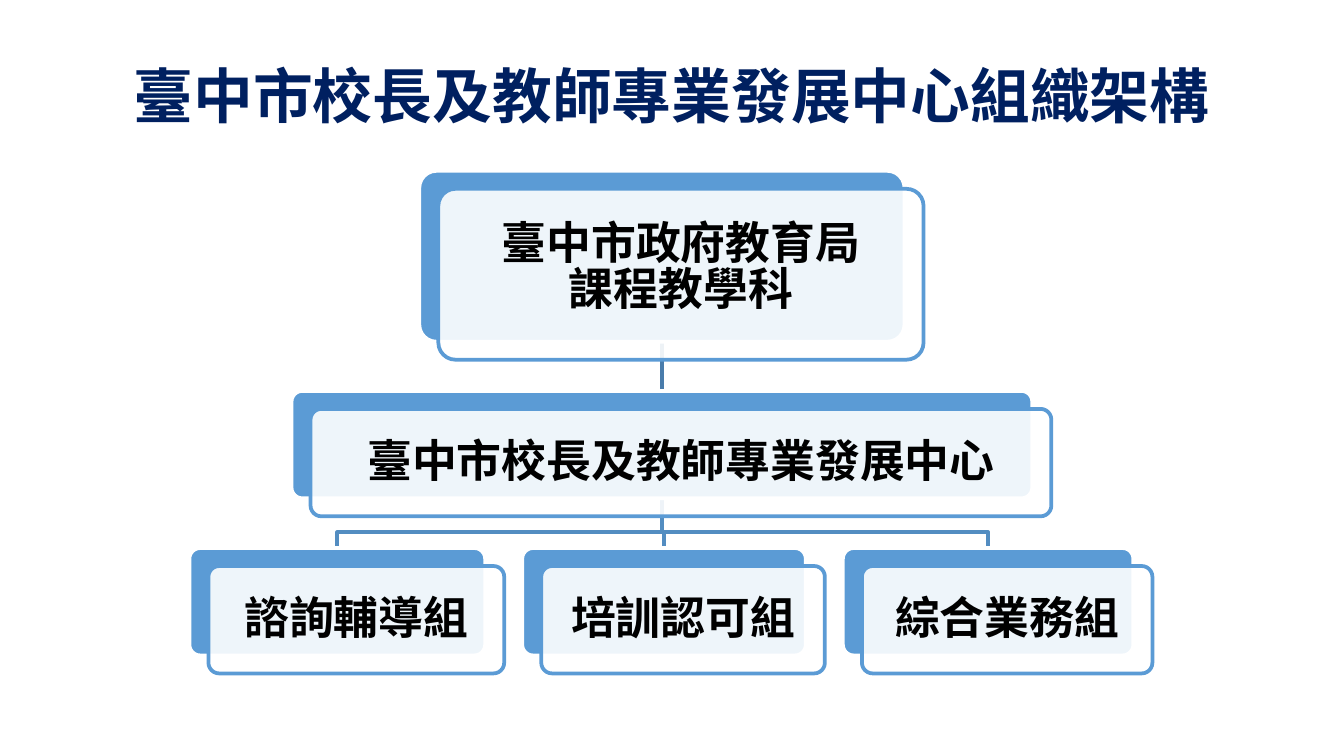
from dataclasses import dataclass

from lxml import etree
from pptx import Presentation
from pptx.dml.color import RGBColor
from pptx.enum.shapes import MSO_CONNECTOR, MSO_SHAPE
from pptx.enum.text import MSO_ANCHOR, PP_ALIGN
from pptx.oxml.ns import qn
from pptx.util import Cm, Pt

ROUNDED = MSO_SHAPE.ROUNDED_RECTANGLE
STRAIGHT = MSO_CONNECTOR.STRAIGHT
MIDDLE = MSO_ANCHOR.MIDDLE
CENTER = PP_ALIGN.CENTER


@dataclass(frozen=True)
class Theme:
    """Colours, type sizes and line width of the slide."""
    font: str = "Noto Sans CJK SC"
    navy: str = "002060"
    blue: str = "5B9BD5"
    white: str = "FFFFFF"
    black: str = "000000"
    upper_link: str = "497CAB"
    lower_link: str = "538DC1"
    title_size: int = 32
    card_size: int = 24
    paragraph_gap: int = 10
    line_width: int = 2


@dataclass(frozen=True)
class Box:
    """A rectangle in centimetres."""
    left: float
    top: float
    width: float
    height: float

    @property
    def center(self):
        """Return the horizontal centre."""
        return self.left + self.width / 2

    @property
    def bottom(self):
        """Return the lower edge."""
        return self.top + self.height

    def shifted(self, across, down):
        """Return the same box moved by an offset."""
        return Box(self.left + across, self.top + down, self.width, self.height)

    def inset(self, margin):
        """Return the box shrunk on every side."""
        return Box(self.left + margin, self.top + margin,
                   self.width - 2 * margin, self.height - 2 * margin)

    def lengths(self):
        """Return the box as slide lengths."""
        return Cm(self.left), Cm(self.top), Cm(self.width), Cm(self.height)


THEME = Theme()


def set_line(line, color):
    """Give a line its colour and the theme width."""
    line.color.rgb = RGBColor.from_string(color)
    line.width = Pt(THEME.line_width)


def add_text(slide, box, lines, size, color, spacing, margin):
    """Write centred bold lines in a box."""
    frame = slide.shapes.add_textbox(*box.lengths()).text_frame
    frame.word_wrap = True
    frame.vertical_anchor = MIDDLE
    frame.margin_top = frame.margin_bottom = Cm(margin)
    for index, line in enumerate(lines):
        paragraph = frame.add_paragraph() if index else frame.paragraphs[0]
        paragraph.alignment = CENTER
        paragraph.line_spacing = spacing
        paragraph.space_after = Pt(THEME.paragraph_gap)
        run = paragraph.add_run()
        run.text = line
        run.font.size = Pt(size)
        run.font.bold = True
        run.font.color.rgb = RGBColor.from_string(color)
        run.font.name = THEME.font
        properties = run.font._element
        etree.SubElement(properties, qn("a:ea")).set("typeface", THEME.font)


def add_panel(slide, box, fill, line, opacity=100):
    """Add one rounded panel of a card."""
    shape = slide.shapes.add_shape(ROUNDED, *box.lengths())
    shape.adjustments[0] = 0.1
    shape.shadow.inherit = False
    shape.fill.solid()
    shape.fill.fore_color.rgb = RGBColor.from_string(fill)
    set_line(shape.line, line)
    if opacity < 100:
        color = shape._element.spPr.find(qn("a:solidFill"))[0]
        etree.SubElement(color, qn("a:alpha")).set("val", str(opacity * 1000))


def add_card(slide, box, lines, spacing=0.9):
    """Add a blue panel, an offset translucent panel and its label."""
    front = box.shifted(0.36, 0.34)
    add_panel(slide, box, THEME.blue, THEME.white)
    add_panel(slide, front, THEME.white, THEME.blue, 90)
    add_text(slide, front.inset(0.03 * box.height), lines,
             THEME.card_size, THEME.black, spacing, 0.25)


def add_straight_link(slide, parent, child):
    """Join two centred cards with a vertical line."""
    link = slide.shapes.add_connector(
        STRAIGHT, Cm(parent.center), Cm(parent.bottom), Cm(parent.center), Cm(child.top))
    set_line(link.line, THEME.upper_link)
    etree.SubElement(link._element.spPr, qn("a:effectLst"))


def add_elbow_link(slide, parent, child):
    """Join a parent card to a child card with a bent line."""
    bend = child.top - 0.3
    points = [(parent.center, bend), (child.center, bend), (child.center, child.top)]
    builder = slide.shapes.build_freeform(Cm(parent.center), Cm(parent.bottom))
    builder.add_line_segments([(Cm(x), Cm(y)) for x, y in points], close=False)
    link = builder.convert_to_shape()
    link.shadow.inherit = False
    link.fill.background()
    set_line(link.line, THEME.lower_link)


def add_title(slide, box):
    """Add the slide title."""
    add_text(slide, box, ["臺中市校長及教師專業發展中心組織架構"],
             THEME.title_size, THEME.navy, 1.0, 0.13)


def add_organization_chart(slide, box):
    """Add the three-level chart of cards inside a box."""
    middle = box.left + 8.93
    bureau = Box(middle - 4.585, box.top, 9.17, 3.23)
    development_center = Box(middle - 7, box.top + 4.16, 14, 2.03)
    groups = []
    left = box.left
    for name, width in (("諮詢輔導組", 5.59), ("培訓認可組", 5.36), ("綜合業務組", 5.49)):
        groups.append((name, Box(left, box.top + 7.13, width, 2.03)))
        left += width + 0.7

    for name, group in reversed(groups):
        add_elbow_link(slide, development_center, group)
    add_straight_link(slide, bureau, development_center)

    add_card(slide, bureau, ["臺中市政府教育局", "課程教學科"], 0.5)
    add_card(slide, development_center, ["臺中市校長及教師專業發展中心"])
    for name, group in groups:
        add_card(slide, group, [name])


def main():
    """Build and save the presentation."""
    presentation = Presentation()
    presentation.slide_width = Cm(25.4)
    presentation.slide_height = Cm(14.29)
    slide = presentation.slides.add_slide(presentation.slide_layouts[6])
    add_title(slide, Box(1, 0.58, 23.4, 2.4))
    add_organization_chart(slide, Box(3.58, 3.23, 18.22, 9.5))
    presentation.save("out.pptx")


if __name__ == "__main__":
    main()
